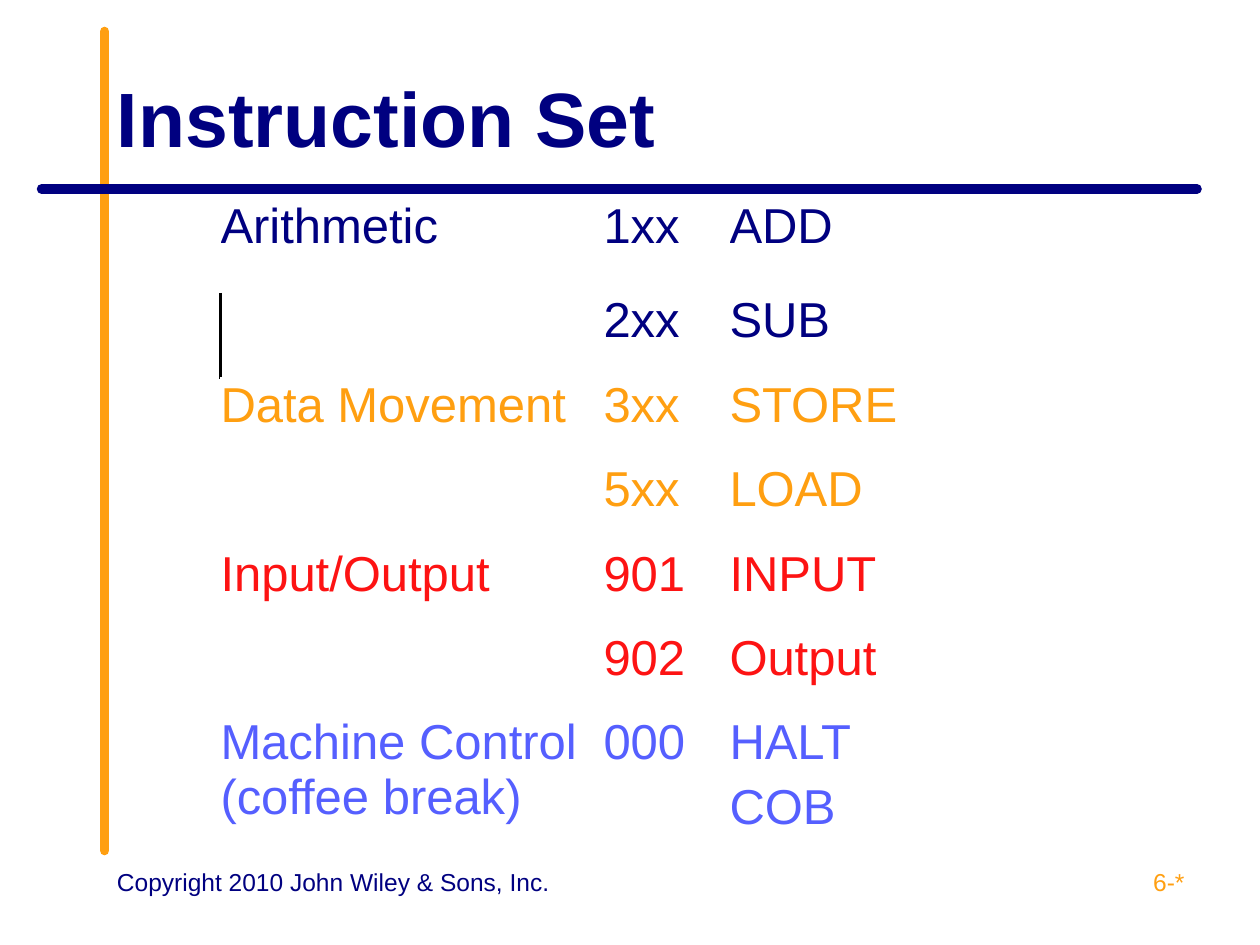
from lxml.etree import SubElement
from pptx import Presentation
from pptx.dml.color import RGBColor
from pptx.enum.shapes import MSO_CONNECTOR
from pptx.enum.text import MSO_ANCHOR, PP_ALIGN
from pptx.oxml.ns import qn
from pptx.util import Inches, Pt

COLORS = {
    "navy": "000080",
    "orange": "FF9F11",
    "red": "FD1313",
    "blue": "555FFF",
    "black": "000000",
}
FONT = "Arial"
COLUMN_WIDTHS = [3.04, 1, 1.6]
ROW_HEIGHTS = [0.75] + [0.67] * 5 + [1.13]
INSTRUCTIONS = [
    ("navy", "Arithmetic", "1xx", "ADD"),
    ("navy", "", "2xx", "SUB"),
    ("orange", "Data Movement", "3xx", "STORE"),
    ("orange", "", "5xx", "LOAD"),
    ("red", "Input/Output", "901", "INPUT"),
    ("red", "", "902", "Output"),
    ("blue", "Machine Control\v(coffee break)", "000", "HALT\nCOB"),
]


def rgb(name):
    return RGBColor.from_string(COLORS[name])


def style_paragraph(paragraph, size, color, bold=False):
    font = paragraph.font
    font.name = FONT
    font.size = Pt(size)
    font.bold = bold
    font.color.rgb = rgb(color)


def add_rule(slide, start, end, color):
    rule = slide.shapes.add_connector(
        MSO_CONNECTOR.STRAIGHT, *[Inches(value) for value in start + end]
    )
    rule.line.color.rgb = rgb(color)
    rule.line.width = Pt(5.5)
    rule.line._get_or_add_ln().set("cap", "rnd")
    SubElement(rule._element.spPr, qn("a:effectLst"))


def add_text(slide, box, text, size, color, bold=False,
             align=PP_ALIGN.LEFT, anchor=MSO_ANCHOR.TOP):
    shape = slide.shapes.add_textbox(*[Inches(value) for value in box])
    frame = shape.text_frame
    frame.word_wrap = True
    frame.vertical_anchor = anchor
    frame.text = text
    paragraph = frame.paragraphs[0]
    paragraph.alignment = align
    style_paragraph(paragraph, size, color, bold)


def add_left_border(cell, color, width):
    properties = cell._tc.get_or_add_tcPr()
    border = SubElement(properties, qn("a:lnL"), w=str(Pt(width)))
    fill = SubElement(border, qn("a:solidFill"))
    SubElement(fill, qn("a:srgbClr"), val=COLORS[color])


def fill_cell(cell, text, color):
    cell.margin_left = cell.margin_right = 0
    cell.margin_top = cell.margin_bottom = 0
    cell.text_frame.text = text
    for index, paragraph in enumerate(cell.text_frame.paragraphs):
        style_paragraph(paragraph, 28, color)
        if index:
            paragraph.space_before = Pt(5.6)


def add_instruction_table(slide):
    table = slide.shapes.add_table(
        len(ROW_HEIGHTS), len(COLUMN_WIDTHS), Inches(1.75), Inches(1.58),
        Inches(sum(COLUMN_WIDTHS)), Inches(sum(ROW_HEIGHTS)),
    ).table
    table.first_row = False
    table.horz_banding = False
    for column, width in zip(table.columns, COLUMN_WIDTHS):
        column.width = Inches(width)
    for row, height, (color, *texts) in zip(table.rows, ROW_HEIGHTS, INSTRUCTIONS):
        row.height = Inches(height)
        for cell, text in zip(row.cells, texts):
            fill_cell(cell, text, color)
    add_left_border(table.cell(1, 0), "black", 2.25)
    for cell in table.iter_cells():
        cell.fill.background()


def main():
    presentation = Presentation()
    presentation.slide_width = Inches(10)
    presentation.slide_height = Inches(7.5)
    slide = presentation.slides.add_slide(presentation.slide_layouts[6])
    add_rule(slide, (0.83, 6.75), (0.83, 0.25), "orange")
    add_rule(slide, (9.5, 1.5), (0.33, 1.5), "navy")
    add_text(slide, (0.83, 6.83, 3.67, 0.52),
             "Copyright 2010 John Wiley & Sons, Inc.", 14, "navy")
    add_text(slide, (7.17, 6.83, 2.33, 0.52), "6-*", 14, "orange",
             align=PP_ALIGN.RIGHT)
    add_text(slide, (0.83, 0.3, 8.67, 1.25), "Instruction Set", 44, "navy",
             bold=True, anchor=MSO_ANCHOR.MIDDLE)
    add_instruction_table(slide)
    presentation.save("out.pptx")


if __name__ == "__main__":
    main()
